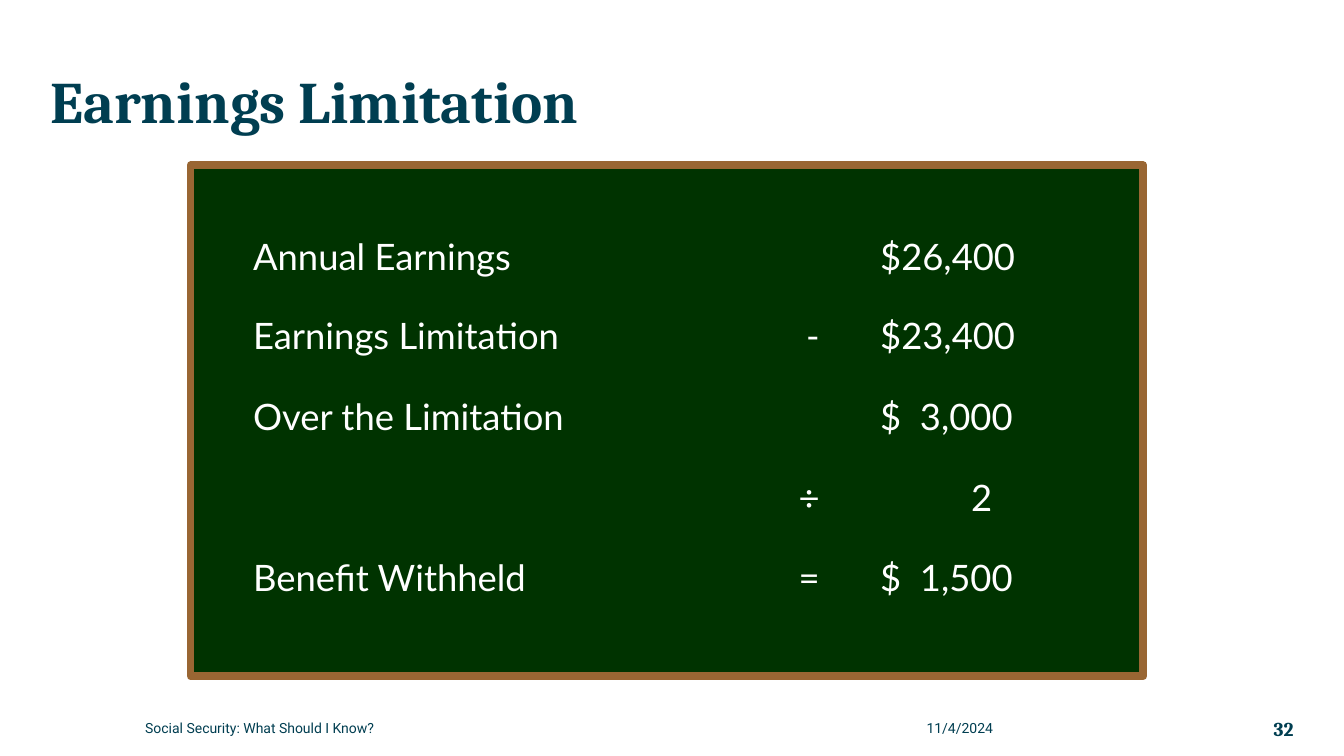
from pptx import Presentation
from pptx.dml.color import RGBColor
from pptx.enum.shapes import MSO_SHAPE
from pptx.enum.text import MSO_ANCHOR, PP_ALIGN
from pptx.oxml.ns import qn
from pptx.util import Inches, Pt

COLORS = {"ink": "003E51", "board": "003300", "frame": "996633", "chalk": "FFFFFF"}
NO_GRID_STYLE = "{2D5ABB26-0587-4C30-8999-92F81FD0307C}"
COLUMN_WIDTHS = (4.97, 0.75, 2.52)
ROW_HEIGHTS = (0.78, 0.8, 0.8, 0.8, 0.8)
CALCULATION = (
    ("Annual Earnings", "", "$26,400"),
    ("Earnings Limitation", "-", "$23,400"),
    ("Over the Limitation", "", "$  3,000"),
    ("", "÷", " 2"),
    ("Benefit Withheld", "=", "$  1,500"),
)


def color(key):
    """Return the named palette colour."""
    return RGBColor.from_string(COLORS[key])


def write(frame, text, font="Roboto", size=10, ink="ink", bold=False,
          align=PP_ALIGN.LEFT, line_spacing=None, indent=0):
    """Write one formatted paragraph into a text frame."""
    paragraph = frame.paragraphs[0]
    paragraph.alignment = align
    if line_spacing:
        paragraph.line_spacing = line_spacing
    if indent:
        properties = paragraph._p.get_or_add_pPr()
        properties.set("marL", str(Inches(indent)))
        properties.set("indent", "0")
    run = paragraph.add_run()
    run.text = text
    run.font.name = font
    run.font.size = Pt(size)
    run.font.bold = bold
    run.font.color.rgb = color(ink)


def add_label(slide, box, text, anchor=MSO_ANCHOR.MIDDLE, **text_format):
    """Place a text box without margins in the given box."""
    frame = slide.shapes.add_textbox(*map(Inches, box)).text_frame
    frame.word_wrap = True
    frame.vertical_anchor = anchor
    frame.margin_left = frame.margin_right = 0
    frame.margin_top = frame.margin_bottom = 0
    write(frame, text, **text_format)


def add_calculation(slide, left, top, width, height):
    """Fill the box with the rows of the benefit calculation."""
    table = slide.shapes.add_table(
        len(CALCULATION), len(COLUMN_WIDTHS),
        Inches(left), Inches(top), Inches(width), Inches(height)).table
    table._tbl.tblPr.find(qn("a:tableStyleId")).text = NO_GRID_STYLE
    table.first_row = table.horz_banding = False
    for column, column_width in zip(table.columns, COLUMN_WIDTHS):
        column.width = Inches(column_width)
    for row, row_height, entries in zip(table.rows, ROW_HEIGHTS, CALCULATION):
        row.height = Inches(row_height)
        aligns = (PP_ALIGN.LEFT, PP_ALIGN.RIGHT,
                  PP_ALIGN.LEFT if entries[2].startswith("$") else PP_ALIGN.CENTER)
        for cell, entry, align, indent in zip(row.cells, entries, aligns, (0, 0, 0.5)):
            cell.fill.background()
            cell.vertical_anchor = MSO_ANCHOR.MIDDLE
            cell.margin_left = cell.margin_right = Inches(0.05)
            cell.margin_top = cell.margin_bottom = Inches(0.05)
            if entry:
                write(cell.text_frame, entry, font="Lato", size=26, ink="chalk",
                      align=align, indent=indent)


def add_chalkboard(slide, left, top, width, height):
    """Draw the framed chalkboard with the calculation on it."""
    board = slide.shapes.add_shape(
        MSO_SHAPE.RECTANGLE, Inches(left), Inches(top), Inches(width), Inches(height))
    board.shadow.inherit = False
    board.fill.solid()
    board.fill.fore_color.rgb = color("board")
    board.line.color.rgb = color("frame")
    board.line.width = Pt(5.5)
    add_calculation(slide, left + 0.57, top + 0.51, sum(COLUMN_WIDTHS), sum(ROW_HEIGHTS))


def add_footer(slide, left, top, width, height):
    """Lay out the talk title, date and slide number in a strip."""
    date_width, number_width = 2.53, 1.11
    talk_width = width - date_width - number_width
    date_left = left + talk_width
    add_label(slide, (left, top, talk_width, height), "Social Security: What Should I Know?")
    add_label(slide, (date_left, top, date_width, height), "11/4/2024")
    add_label(slide, (date_left + date_width, top, number_width, height), "32",
              font="Cambria", size=14, bold=True, align=PP_ALIGN.RIGHT)


def main():
    """Build and save the slide."""
    presentation = Presentation()
    presentation.slide_width = Inches(13.33)
    presentation.slide_height = Inches(7.5)
    slide = presentation.slides.add_slide(presentation.slide_layouts[6])
    add_label(slide, (0.5, 0.43, 12.33, 0.92), "Earnings Limitation",
              anchor=MSO_ANCHOR.BOTTOM, font="Cambria", size=42, bold=True, line_spacing=0.9)
    add_chalkboard(slide, 1.89, 1.64, 9.45, 5.07)
    add_footer(slide, 1.44, 7.09, 11.39, 0.27)
    presentation.save("out.pptx")


if __name__ == "__main__":
    main()
